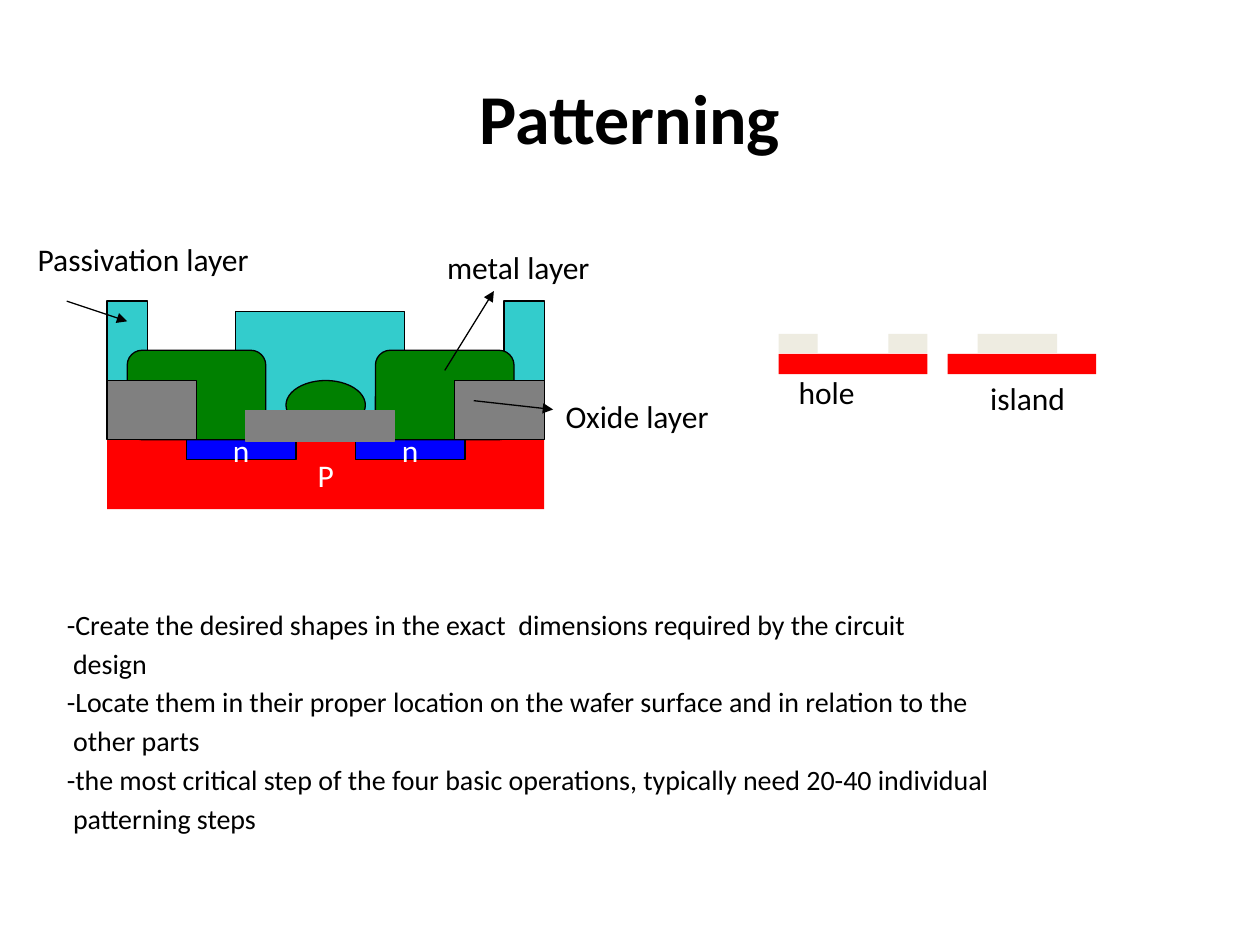
from lxml.etree import SubElement
from pptx import Presentation
from pptx.dml.color import RGBColor
from pptx.enum.shapes import MSO_CONNECTOR, MSO_SHAPE as SHAPE
from pptx.enum.text import MSO_ANCHOR, MSO_AUTO_SIZE, PP_ALIGN
from pptx.oxml.ns import qn
from pptx.util import Inches, Pt

FONT = "Calibri"
BLACK, WHITE, RED, BLUE = "000000", "FFFFFF", "FF0000", "0000FF"
CYAN, GREEN, GREY, CREAM = "33CCCC", "008000", "808080", "EEECE1"

TITLE = "Patterning"
BODY = [
    "-Create the desired shapes in the exact  dimensions required by the circuit",
    " design",
    "-Locate them in their proper location on the wafer surface and in relation to the",
    " other parts",
    "-the most critical step of the four basic operations, typically need 20-40 individual",
    " patterning steps",
]

# Back to front: preset, lefts, top, width, height, fill, line, text
DEVICE = [
    (SHAPE.RECTANGLE, [0.85], 3.49, 3.47, 0.55, RED, None, "P"),
    (SHAPE.RECTANGLE, [1.48, 2.82], 3.49, 0.87, 0.16, BLUE, BLACK, "n"),
    (SHAPE.RECTANGLE, [0.85, 4], 2.39, 0.32, 0.63, CYAN, BLACK, ""),
    (SHAPE.RECTANGLE, [1.87], 2.47, 1.34, 0.79, CYAN, BLACK, ""),
    (SHAPE.ROUNDED_RECTANGLE, [1.01, 2.98], 2.78, 1.1, 0.71, GREEN, BLACK, ""),
    (SHAPE.OVAL, [2.27], 3.02, 0.63, 0.39, GREEN, BLACK, ""),
    (SHAPE.RECTANGLE, [1.95], 3.26, 1.18, 0.24, GREY, GREY, ""),
    (SHAPE.RECTANGLE, [0.85, 3.61], 3.02, 0.71, 0.47, GREY, BLACK, ""),
]
PATTERNS = [
    (SHAPE.RECTANGLE, [6.18, 7.52], 2.81, 1.18, 0.16, RED, None, ""),
    (SHAPE.RECTANGLE, [6.18, 7.05], 2.65, 0.31, 0.15, CREAM, None, ""),
    (SHAPE.RECTANGLE, [7.76], 2.65, 0.63, 0.15, CREAM, None, ""),
]
# Text, left, top, width
DEVICE_LABELS = [
    ("Passivation layer", 0.2, 1.86, 2.09),
    ("metal layer", 3.45, 1.92, 1.42),
    ("Oxide layer", 4.39, 3.1, 1.47),
]
PATTERN_LABELS = [("hole", 6.24, 2.91, 0.67), ("island", 7.76, 2.96, 0.85)]
# x and y of the start, then of the arrowhead
ARROWS = [
    (0.53, 2.39, 1.01, 2.55),
    (3.53, 2.94, 3.92, 2.31),
    (3.76, 3.18, 4.39, 3.25),
]


def rgb(value):
    return RGBColor.from_string(value)


def write(p, text, size=18, color=BLACK, bold=False, align=PP_ALIGN.LEFT):
    p.alignment = align
    r = p.add_run()
    r.text = text
    r.font.name, r.font.size, r.font.bold = FONT, Pt(size), bold
    r.font.color.rgb = rgb(color)


def add_layer(group, preset, left, top, width, height, fill, line, text):
    sp = group.shapes.add_shape(preset, *map(Inches, (left, top, width, height)))
    sp.shadow.inherit = False
    sp.fill.solid()
    sp.fill.fore_color.rgb = rgb(fill)
    if line:
        sp.line.color.rgb = rgb(line)
        sp.line.width = Pt(0.75)
    else:
        sp.line.fill.background()
    if text:
        tf = sp.text_frame
        tf.word_wrap = False
        tf.vertical_anchor = MSO_ANCHOR.MIDDLE
        write(tf.paragraphs[0], text, color=WHITE, align=PP_ALIGN.CENTER)


def add_label(group, text, left, top, width):
    tf = group.shapes.add_textbox(*map(Inches, (left, top, width, 0.4))).text_frame
    tf.word_wrap = False
    tf.auto_size = MSO_AUTO_SIZE.SHAPE_TO_FIT_TEXT
    write(tf.paragraphs[0], text)


def add_arrow(group, *ends):
    cxn = group.shapes.add_connector(MSO_CONNECTOR.STRAIGHT, *map(Inches, ends))
    cxn.line.color.rgb = rgb(BLACK)
    cxn.line.width = Pt(0.75)
    SubElement(cxn.line._get_or_add_ln(), qn("a:tailEnd"), type="triangle")
    SubElement(cxn._element.spPr, qn("a:effectLst"))


def add_drawing(s, layers, labels, arrows=()):
    group = s.shapes.add_group_shape()
    for preset, lefts, *rest in layers:
        for left in lefts:
            add_layer(group, preset, left, *rest)
    for label in labels:
        add_label(group, *label)
    for arrow in arrows:
        add_arrow(group, *arrow)


def place(sp, *box):
    sp.left, sp.top, sp.width, sp.height = map(Inches, box)


def add_body(sp):
    place(sp, 0.43, 4.77, 8.19, 2.24)
    tf = sp.text_frame
    tf.word_wrap = True
    tf.auto_size = MSO_AUTO_SIZE.NONE
    for i, text in enumerate(BODY):
        p = tf.add_paragraph() if i else tf.paragraphs[0]
        pPr = p._p.get_or_add_pPr()
        pPr.set("marL", str(Inches(0.38)))
        pPr.set("indent", str(-Inches(0.38)))
        SubElement(pPr, qn("a:buNone"))
        p.space_before = Pt(3 if i else 0)
        write(p, text, size=16)


def main():
    prs = Presentation()
    prs.slide_width, prs.slide_height = Inches(10), Inches(7.5)
    s = prs.slides.add_slide(prs.slide_layouts[1])
    title, body = s.placeholders
    place(title, 0.5, 0.3, 9, 1.25)
    title.text_frame.vertical_anchor = MSO_ANCHOR.MIDDLE
    write(title.text_frame.paragraphs[0], TITLE, size=40, bold=True,
          align=PP_ALIGN.CENTER)
    add_body(body)
    add_drawing(s, DEVICE, DEVICE_LABELS, ARROWS)
    add_drawing(s, PATTERNS, PATTERN_LABELS)
    prs.save("out.pptx")


if __name__ == "__main__":
    main()
